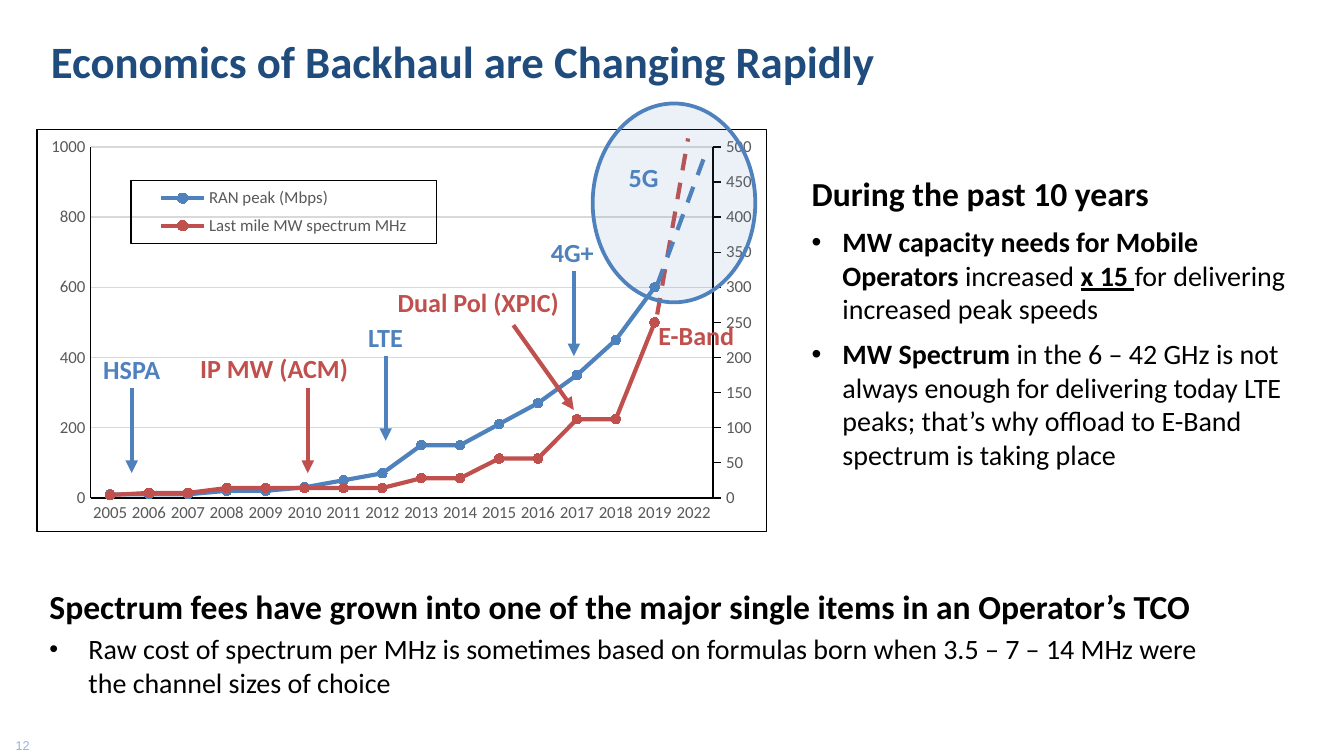
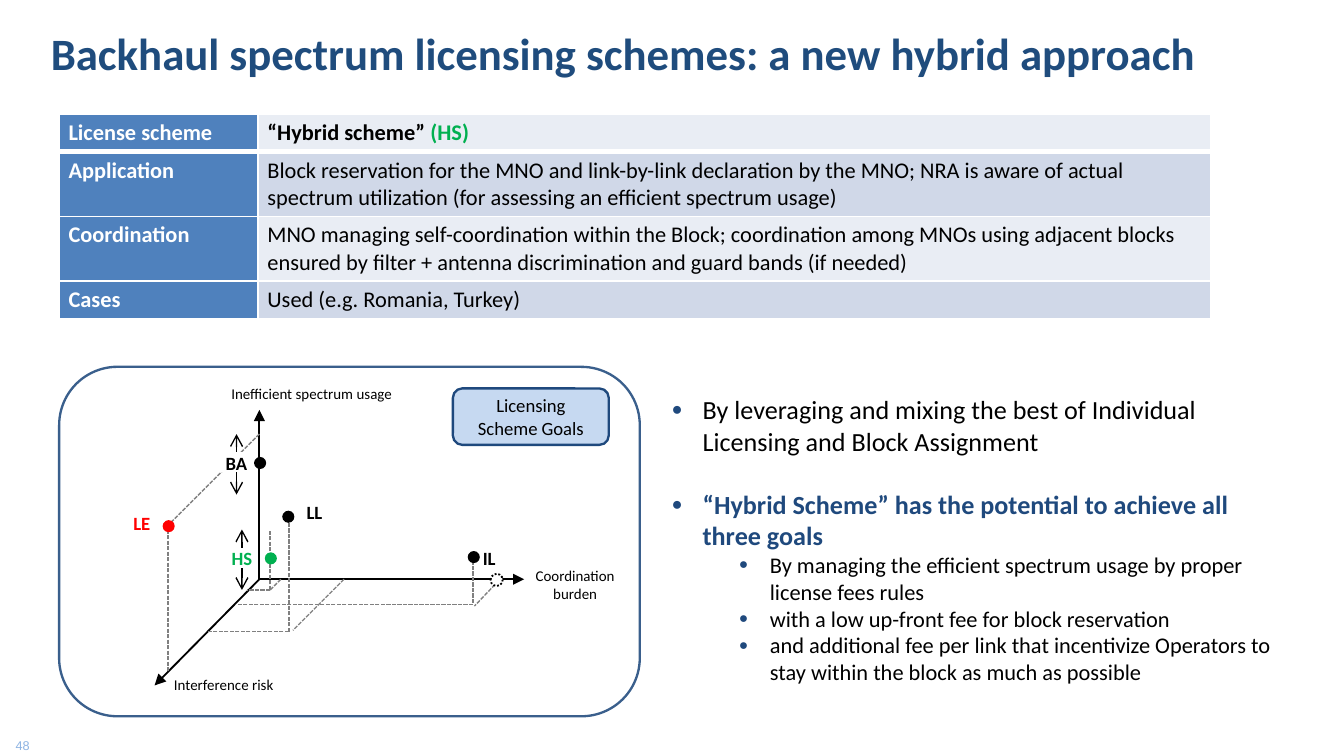
from copy import deepcopy

from pptx import Presentation
from pptx import util as u
from pptx.chart import axis, data
from pptx.dml import color as dml
from pptx.enum import chart as ch, dml as line_styles, shapes, text
from pptx.oxml import parse_xml
from pptx.oxml import ns

TITLE, NAVY, BLUE, RED, GREEN = "1F4C7D", "1F497D", "4F81BD", "C0504D", "00B050"
BLACK, WHITE, GREY, PAGE = "000000", "FFFFFF", "808080", "8EB4E3"
LIGHT, MID, TICK = "E9EDF4", "D0D8E8", "595959"
CHART_W, CHART_H = 5.44, 3
DASH = line_styles.MSO_LINE
A_NS = ns.nsdecls("a")


def rgb(code):
    return dml.RGBColor.from_string(code)


def run(p, words, size, color=BLACK, bold=False, underline=False, font="Calibri"):
    r = p.add_run()
    r.text = words
    f = r.font
    f.name, f.size, f.bold, f.underline = font, u.Pt(size), bold, underline
    f.color.rgb = rgb(color)


def bullet(p, left, hang, mark="•", color=None, percent=100):
    """Give the paragraph a hanging bullet; left and hang are inches."""
    pPr = p._p.get_or_add_pPr()
    pPr.set("marL", str(u.Inches(left)))
    pPr.set("indent", str(-u.Inches(hang)))
    if color:
        pPr.append(parse_xml(f'<a:buClr {A_NS}><a:srgbClr val="{color}"/></a:buClr>'))
    pPr.append(parse_xml(f'<a:buSzPct {A_NS} val="{percent * 1000}"/>'))
    pPr.append(parse_xml(f'<a:buFont {A_NS} typeface="Arial"/>'))
    pPr.append(parse_xml(f'<a:buChar {A_NS} char="{mark}"/>'))


def paragraph(tf, first=False, before=0):
    p = tf.paragraphs[0] if first else tf.add_paragraph()
    p.space_before = u.Pt(before)
    return p


def text_box(sp_tree, x, y, w, h, wrap=True):
    tf = sp_tree.add_textbox(*map(u.Inches, (x, y, w, h))).text_frame
    tf.word_wrap = wrap
    return tf


def label(sp_tree, lines, x, y, w, h, size, color=BLACK, bold=True, centre=True):
    tf = text_box(sp_tree, x, y, w, h, wrap=False)
    for i, words in enumerate(lines.split("\n")):
        p = paragraph(tf, first=i == 0)
        p.alignment = text.PP_ALIGN.CENTER if centre else text.PP_ALIGN.LEFT
        run(p, words, size, color, bold)


def shape(sp_tree, kind, x, y, w, h, fill=None, line=None, width=1.0, alpha=None):
    sp = sp_tree.add_shape(kind, *map(u.Inches, (x, y, w, h)))
    sp.shadow.inherit = False
    if fill:
        sp.fill.solid()
        sp.fill.fore_color.rgb = rgb(fill)
        if alpha:
            clr = sp._element.spPr.find(".//" + ns.qn("a:srgbClr"))
            clr.append(parse_xml(f'<a:alpha {A_NS} val="{alpha * 1000}"/>'))
    else:
        sp.fill.background()
    if line:
        sp.line.color.rgb = rgb(line)
        sp.line.width = u.Pt(width)
    else:
        sp.line.fill.background()
    return sp


def connector(sp_tree, x1, y1, x2, y2, color, width, dash=None, head=None, tail=None):
    c = sp_tree.add_connector(shapes.MSO_CONNECTOR.STRAIGHT,
                              *map(u.Inches, (x1, y1, x2, y2)))
    c.line.color.rgb = rgb(color)
    c.line.width = u.Pt(width)
    if dash:
        c.line.dash_style = dash
    ln = c.line._get_or_add_ln()
    for tag, kind in (("headEnd", head), ("tailEnd", tail)):
        if kind:
            ln.append(parse_xml(f'<a:{tag} {A_NS} type="{kind}"/>'))
    c._element.spPr.append(parse_xml(f"<a:effectLst {A_NS}/>"))


def new_slide(prs, title, y, number):
    s = prs.slides.add_slide(prs.slide_layouts[6])
    tf = text_box(s.shapes, -0.1, 5.4, 0.42, 0.3)
    tf.vertical_anchor = text.MSO_ANCHOR.MIDDLE
    p = paragraph(tf, first=True)
    p.alignment = text.PP_ALIGN.RIGHT
    run(p, number, 6.8, PAGE, font="Arial")
    p = paragraph(text_box(s.shapes, 0.28, y, 8.74, 0.47), first=True)
    run(p, title, 24, TITLE, bold=True)
    return s


def frame():
    """Thin black outline for the chart and its legend."""
    return parse_xml(f'<c:spPr {ns.nsdecls("c", "a")}><a:noFill/><a:ln w="9525"><a:solidFill>'
                     f'<a:srgbClr val="{BLACK}"/></a:solidFill></a:ln></c:spPr>')


def place(parent, index, x, y, w, h, inner=False):
    """Fix the layout of a chart part, in inches from the chart's corner."""
    for old in parent.findall(ns.qn("c:layout")):
        parent.remove(old)
    target = '<c:layoutTarget val="inner"/>' if inner else ""
    modes = "".join(f'<c:{k}Mode val="edge"/>' for k in "xy")
    shares = (x / CHART_W, y / CHART_H, w / CHART_W, h / CHART_H)
    sizes = "".join(f'<c:{k} val="{v}"/>' for k, v in zip("xywh", shares))
    parent.insert(index, parse_xml(f'<c:layout {ns.nsdecls("c")}><c:manualLayout>{target}'
                                   f'{modes}{sizes}</c:manualLayout></c:layout>'))


def style_axis(ax):
    ax.major_tick_mark = ax.minor_tick_mark = ch.XL_TICK_MARK.NONE
    ax.format.line.color.rgb = rgb(BLACK)
    ax.format.line.width = u.Pt(0.75)
    style_font(ax.tick_labels.font)


def style_font(f, size=9, color=TICK):
    f.name, f.size = "Calibri", u.Pt(size)
    f.color.rgb = rgb(color)


def move_to_right_axis(chart, top, step):
    """Plot the last series against a second value axis."""
    area = chart.element.find(".//" + ns.qn("c:plotArea"))
    first = area.find(ns.qn("c:lineChart"))
    second = deepcopy(first)
    first.addnext(second)
    first.remove(first.findall(ns.qn("c:ser"))[-1])
    for ser in second.findall(ns.qn("c:ser"))[:-1]:
        second.remove(ser)
    cat, val = (deepcopy(ax._element) for ax in (chart.category_axis, chart.value_axis))
    area.find(ns.qn("c:valAx")).addnext(val)
    val.addnext(cat)
    ids = {cat.find(ns.qn("c:axId")).get("val"): "5001",
           val.find(ns.qn("c:axId")).get("val"): "5002"}
    for el in (second, cat, val):
        for tag in ("c:axId", "c:crossAx"):
            for ref in el.findall(ns.qn(tag)):
                ref.set("val", ids[ref.get("val")])
    axis.CategoryAxis(cat).visible = False
    right = axis.ValueAxis(val)
    right.maximum_scale, right.major_unit = top, step
    right.has_major_gridlines = False
    right.major_tick_mark = ch.XL_TICK_MARK.OUTSIDE
    val.find(ns.qn("c:axPos")).set("val", "r")
    val.find(ns.qn("c:crosses")).set("val", "max")


def growth_chart(s):
    cd = data.CategoryChartData()
    cd.categories = [str(y) for y in range(2005, 2020)] + ["2022"]
    cd.add_series("RAN peak (Mbps)", [10, 10, 10, 20, 20, 30, 50, 70, 150, 150,
                                      210, 270, 350, 450, 600, None])
    cd.add_series("Last mile MW spectrum MHz", [4, 7, 7, 14, 14, 14, 14, 14, 28, 28,
                                                56, 56, 112, 112, 250, None])
    chart = s.shapes.add_chart(ch.XL_CHART_TYPE.LINE_MARKERS,
                               *map(u.Inches, (0.27, 0.96, CHART_W, CHART_H)), cd).chart
    chart.has_title = False
    style_font(chart.font, 10, BLACK)
    plot = chart.plots[0]
    plot.vary_by_categories = False
    for ser, color in zip(plot.series, (BLUE, RED)):
        ser.smooth = False
        ser.format.line.color.rgb = rgb(color)
        ser.format.line.width = u.Pt(2.25)
        ser.marker.style, ser.marker.size = ch.XL_MARKER_STYLE.CIRCLE, 5
        ser.marker.format.fill.solid()
        ser.marker.format.fill.fore_color.rgb = rgb(color)
        ser.marker.format.line.color.rgb = rgb(color)
    left = chart.value_axis
    for ax in (chart.category_axis, left):
        style_axis(ax)
    left.minimum_scale, left.maximum_scale, left.major_unit = 0, 1000, 200
    left.has_major_gridlines = True
    left.major_gridlines.format.line.color.rgb = rgb("D9D9D9")
    left.major_gridlines.format.line.width = u.Pt(0.75)
    move_to_right_axis(chart, 500, 50)

    chart.has_legend = True
    legend = chart.legend
    legend.position = ch.XL_LEGEND_POSITION.RIGHT
    legend.include_in_layout = True
    style_font(legend.font)
    box = legend._element
    place(box, 1, 0.7, 0.38, 2.28, 0.47)
    box.find(ns.qn("c:overlay")).addnext(frame())
    place(chart.element.find(".//" + ns.qn("c:plotArea")), 0, 0.4, 0.13, 4.64, 2.62, inner=True)
    chart.element.find(ns.qn("c:chart")).addnext(frame())


def economics_slide(prs):
    s = new_slide(prs, "Economics of Backhaul are Changing Rapidly", 0.2, "12")
    tf = text_box(s.shapes, 0.27, 4.31, 9.06, 0.92)
    run(paragraph(tf, first=True, before=3.6), "Spectrum fees have grown into one of the "
        "major single items in an Operator’s TCO", 18, bold=True)
    p = paragraph(tf, before=3)
    bullet(p, 0.29, 0.29, percent=90)
    run(p, "Raw cost of spectrum per MHz is sometimes based on formulas born when "
        "3.5 – 7 – 14 MHz were the channel sizes of choice", 15)
    growth_chart(s)

    tf = text_box(s.shapes, 5.94, 1.24, 3.78, 2.34)
    run(paragraph(tf, first=True), "During the past 10 years", 18, bold=True)
    points = [
        [("MW capacity needs for Mobile Operators ", True, False), ("increased ", False, False),
         ("x 15 ", True, True), ("for delivering increased peak speeds", False, False)],
        [("MW Spectrum ", True, False),
         ("in the 6 – 42 GHz is not always enough for delivering today LTE peaks; "
          "that’s why offload to E-Band spectrum is taking place", False, False)]]
    for point in points:
        p = paragraph(tf, before=6)
        bullet(p, 0.23, 0.23)
        for words, bold, underline in point:
            run(p, words, 15, bold=bold, underline=underline)

    for words, x, y, w, color in (
            ("HSPA", 0.67, 2.58, 0.63, BLUE), ("LTE", 2.64, 2.34, 0.46, BLUE),
            ("4G+", 4, 1.71, 0.52, BLUE), ("5G", 4.58, 1.15, 0.43, BLUE),
            ("IP MW (ACM)", 1.39, 2.57, 1.31, RED), ("Dual Pol (XPIC)", 2.86, 2.08, 1.41, RED),
            ("E-Band", 4.8, 2.33, 0.78, RED)):
        label(s.shapes, words, x, y, w, 0.34, 14, color, centre=False)
    for x, y, dx, color in ((0.98, 2.89, 0, BLUE), (2.87, 2.65, 0, BLUE), (4.27, 2.02, 0, BLUE),
                            (2.29, 2.89, 0, RED), (3.82, 2.42, 0.45, RED)):
        connector(s.shapes, x, y, x + dx, y + 0.63, color, 2.25, tail="triangle")
    connector(s.shapes, 4.89, 2.34, 5.12, 1.03, RED, 2.25, DASH.DASH)
    connector(s.shapes, 4.89, 2.12, 5.24, 1.17, BLUE, 2.25, DASH.DASH)
    shape(s.shapes, shapes.MSO_SHAPE.OVAL, 4.41, 0.77, 1.21, 1.48, BLUE, BLUE, 2, alpha=11)


def cell_borders(cell, bottom):
    tcPr = cell._tc.get_or_add_tcPr()
    for i, (side, width) in enumerate((("L", 1), ("R", 1), ("T", 1), ("B", bottom))):
        tcPr.insert(i, parse_xml(f'<a:ln{side} {A_NS} w="{u.Pt(width)}"><a:solidFill>'
                                 f'<a:srgbClr val="{WHITE}"/></a:solidFill></a:ln{side}>'))


def scheme_table(s):
    rows = [
        ("License scheme", [("“Hybrid scheme” ", BLACK), ("(HS)", GREEN)], 0.27),
        ("Application", [("Block reservation for the MNO and link-by-link declaration by the MNO; "
                          "NRA is aware of actual spectrum utilization (for assessing an "
                          "efficient spectrum usage)", BLACK)], 0.48),
        ("Coordination", [("MNO managing self-coordination within the Block; coordination among "
                           "MNOs using adjacent blocks ensured by filter + antenna discrimination "
                           "and guard bands (if needed)", BLACK)], 0.48),
        ("Cases", [("Used (e.g. Romania, Turkey)", BLACK)], 0.27)]
    table = s.shapes.add_table(4, 2, *map(u.Inches, (0.44, 0.85, 8.57, 1.5))).table
    for col, width in zip(table.columns, (1.48, 7.09)):
        col.width = u.Inches(width)
    for i, (name, runs, height) in enumerate(rows):
        table.rows[i].height = u.Inches(height)
        for j, content in enumerate(([(name, WHITE)], runs)):
            cell = table.cell(i, j)
            cell.fill.solid()
            cell.fill.fore_color.rgb = rgb(BLUE if j == 0 else (LIGHT, MID)[i % 2])
            cell.margin_left = cell.margin_right = u.Inches(0.07)
            cell.margin_top = cell.margin_bottom = u.Inches(0.04)
            cell_borders(cell, 3 if i == 0 else 1)
            for words, color in content:
                run(cell.text_frame.paragraphs[0], words, 12, color, bold=i == 0 or j == 0)


def range_mark(s, name, x, y, color):
    """Double arrow with a name on a white patch at its middle."""
    parts = s.shapes.add_group_shape().shapes
    connector(parts, x, y, x, y + 0.45, BLACK, 0.75, head="arrow", tail="arrow")
    shape(parts, shapes.MSO_SHAPE.RECTANGLE, x - 0.12, y + 0.15, 0.23, 0.12, WHITE, WHITE, 2)
    label(parts, name, x - 0.18, y + 0.08, 0.36, 0.27, 10, color)


def goals_diagram(s):
    for x, y in ((1.93, 3.05), (3.9, 4.31), (1.15, 5.1)):
        connector(s.shapes, 1.93, 4.31, x, y, BLACK, 1, tail="triangle")
    for words, x, y, w, h in (("Coordination\nburden", 3.88, 4.17, 0.8, 0.37),
                              ("Interference risk", 1.19, 4.98, 0.95, 0.24),
                              ("Inefficient spectrum usage", 1.61, 2.81, 1.42, 0.24)):
        label(s.shapes, words, x, y, w, h, 8, bold=False)
    for ends in ((3.52, 4.17, 3.52, 4.49), (3.74, 4.29, 3.53, 4.51), (3.52, 4.5, 1.76, 4.5),
                 (1.25, 3.9, 1.25, 4.99), (1.93, 3.23, 1.25, 3.91),
                 (2.56, 4.31, 2.18, 4.69), (2.15, 4.7, 1.54, 4.7), (2.15, 4.7, 2.15, 3.87),
                 (2.09, 4.31, 2.01, 4.39), (2.01, 4.39, 1.84, 4.39), (2.01, 4.39, 2.01, 3.95)):
        connector(s.shapes, *ends, GREY, 0.75, DASH.SQUARE_DOT)
    range_mark(s, "BA", 1.76, 3.23, BLACK)
    range_mark(s, "HS", 1.8, 3.94, GREEN)
    oval, rounded = shapes.MSO_SHAPE.OVAL, shapes.MSO_SHAPE.ROUNDED_RECTANGLE
    for x, y, color in ((3.48, 4.1, BLACK), (1.21, 3.87, "FF0000"), (2.1, 3.8, BLACK),
                        (1.89, 3.4, BLACK), (1.97, 4.11, GREEN)):
        shape(s.shapes, oval, x, y, 0.09, 0.09, color)
    for words, x, y, w, color in (("IL", 3.49, 4.02, 0.3, BLACK), ("LL", 2.18, 3.68, 0.32, BLACK),
                                  ("LE", 0.88, 3.76, 0.35, "FF0000")):
        label(s.shapes, words, x, y, w, 0.27, 10, color)
    goals = shape(s.shapes, rounded, 3.37, 2.89, 1.16, 0.42, "C6D9F1", NAVY, 1.25)
    goals.text_frame.vertical_anchor = text.MSO_ANCHOR.MIDDLE
    p = paragraph(goals.text_frame, first=True)
    p.alignment = text.PP_ALIGN.CENTER
    run(p, "Licensing Scheme Goals", 10)
    shape(s.shapes, rounded, 0.44, 2.73, 4.32, 2.6, line="3A5F8C", width=1.25)
    ring = shape(s.shapes, oval, 3.65, 4.27, 0.09, 0.09, WHITE, BLACK, 1)
    ring.line.dash_style = DASH.ROUND_DOT


def licensing_slide(prs):
    s = new_slide(prs, "Backhaul spectrum licensing schemes: a new hybrid approach", 0.14, "48")
    scheme_table(s)
    tf = text_box(s.shapes, 4.9, 2.88, 4.8, 2.29)
    for i, (words, level, before) in enumerate((
            ("By leveraging and mixing the best of Individual Licensing and Block Assignment", 0, 0),
            ("“Hybrid Scheme” has the potential to achieve all three goals", 0, 17),
            ("By managing the efficient spectrum usage by proper license fees rules", 1, 0),
            ("with a low up-front fee for block reservation", 1, 0),
            ("and additional fee per link that incentivize Operators to stay within the block "
             "as much as possible", 1, 0))):
        p = paragraph(tf, first=i == 0, before=before)
        p.level = level
        bullet(p, 0.23 + 0.5 * level, 0.23, "●", NAVY, 70)
        run(p, words, 14 - 2 * level, NAVY if i == 1 else BLACK, bold=i == 1)
    goals_diagram(s)


def main():
    prs = Presentation()
    prs.slide_width, prs.slide_height = u.Inches(10), u.Inches(10 * 9 / 16)
    economics_slide(prs)
    licensing_slide(prs)
    prs.save("out.pptx")


if __name__ == "__main__":
    main()
